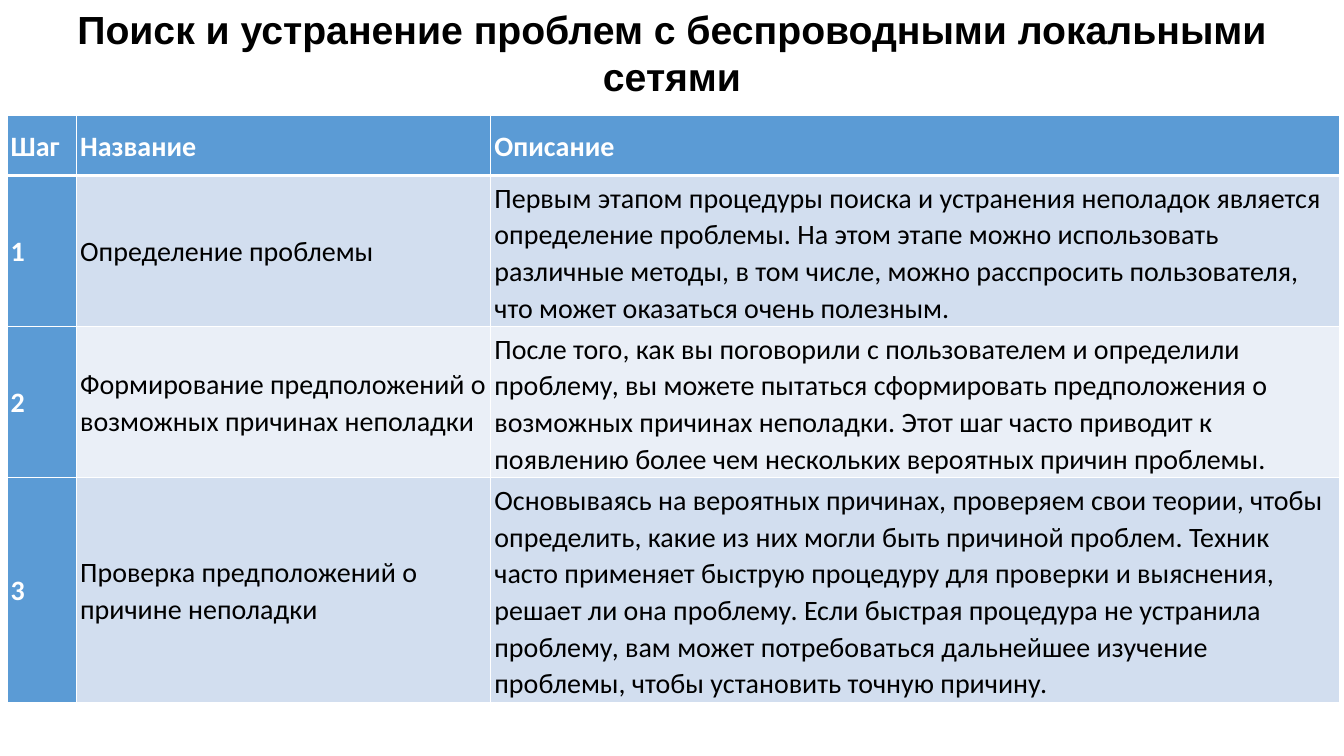
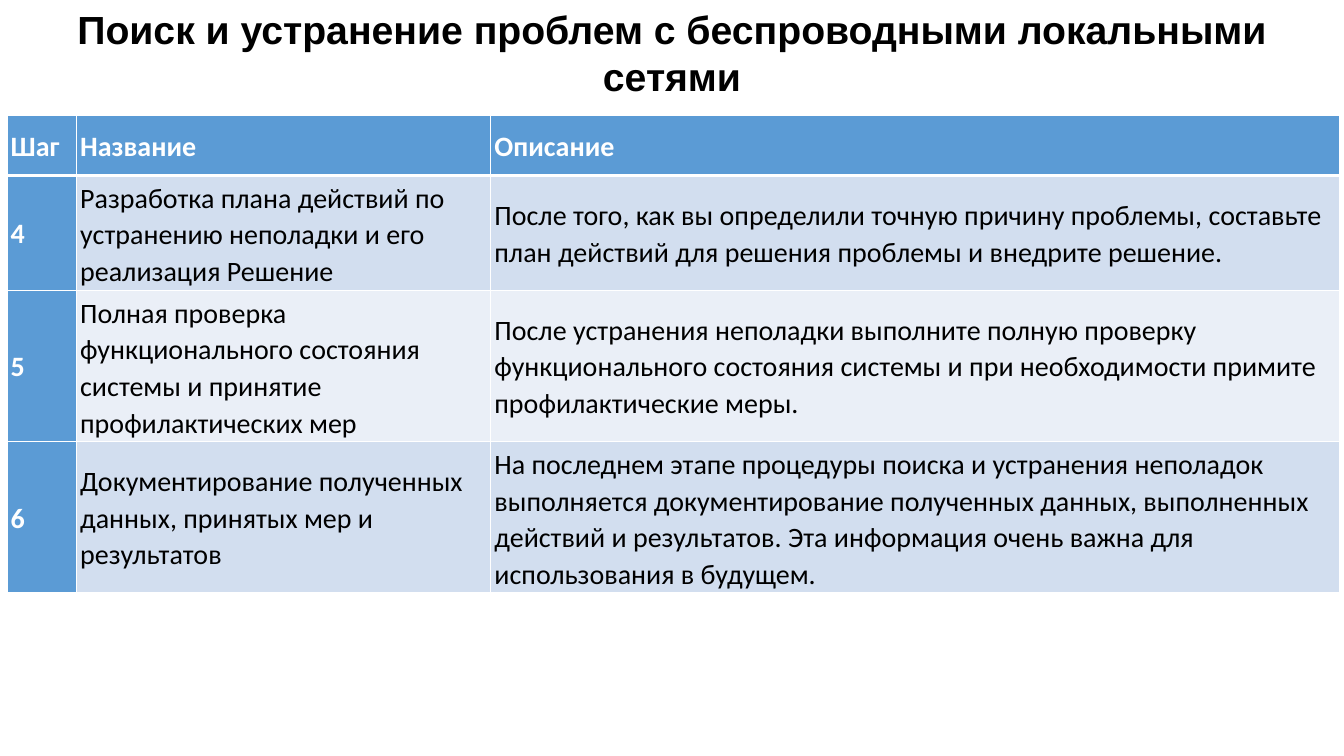
import pptx
import pptx.util
import pptx.dml.color
import pptx.enum.text
import pptx.oxml
import pptx.oxml.ns

Cm, Pt = pptx.util.Cm, pptx.util.Pt
MIDDLE = pptx.enum.text.MSO_ANCHOR.MIDDLE

TITLE = "Поиск и устранение проблем с беспроводными локальными сетями"
HEAD = ("Шаг", "Название", "Описание")

# Each step: row height in cm, name, description
SLIDES = [
    [
        (3.81, "Определение проблемы",
         "Первым этапом процедуры поиска и устранения неполадок является "
         "определение проблемы. На этом этапе можно использовать различные "
         "методы, в том числе, можно расспросить пользователя, что может "
         "оказаться очень полезным."),
        (3.81, "Формирование предположений о возможных причинах неполадки",
         "После того, как вы поговорили с пользователем и определили "
         "проблему, вы можете пытаться сформировать предположения о "
         "возможных причинах неполадки. Этот шаг часто приводит к появлению "
         "более чем нескольких вероятных причин проблемы."),
        (5.66, "Проверка предположений о причине неполадки",
         "Основываясь на вероятных причинах, проверяем свои теории, чтобы "
         "определить, какие из них могли быть причиной проблем. Техник часто "
         "применяет быструю процедуру для проверки и выяснения, решает ли "
         "она проблему. Если быстрая процедура не устранила проблему, вам "
         "может потребоваться дальнейшее изучение проблемы, чтобы установить "
         "точную причину."),
    ],
    [
        (2.9, "Разработка плана действий по устранению неполадки и его "
         "реализация Решение",
         "После того, как вы определили точную причину проблемы, составьте "
         "план действий для решения проблемы и внедрите решение."),
        (3.81, "Полная проверка функционального состояния системы и принятие "
         "профилактических мер",
         "После устранения неполадки выполните полную проверку "
         "функционального состояния системы и при необходимости примите "
         "профилактические меры."),
        (3.81, "Документирование полученных данных, принятых мер и результатов",
         "На последнем этапе процедуры поиска и устранения неполадок "
         "выполняется документирование полученных данных, выполненных "
         "действий и результатов. Эта информация очень важна для "
         "использования в будущем."),
    ],
]

WHITE, BLACK, BLUE = "FFFFFF", "000000", "5B9BD5"
BANDS = ("D2DEEF", "EAEFF7")
WIDTH, HEIGHT = 33.87, 19.05
COLS = (1.75, 10.44, 21.39)
LEFT, TOP, HEAD_H, INSET = 0.18, 2.9, 1.52, 0.09
THIN, THICK = 1, 3


def paint(fill, color):
    fill.solid()
    fill.fore_color.rgb = pptx.dml.color.RGBColor.from_string(color)


def write(para, text, face, size, color, bold):
    run = para.add_run()
    run.text = text
    font = run.font
    font.name, font.size, font.bold = face, Pt(size), bold
    paint(font.fill, color)


def border(cell, **widths):
    """Draw white cell borders; widths in points, in the order L, R, T, B."""
    props = cell._tc.get_or_add_tcPr()
    for spot, (side, width) in enumerate(widths.items()):
        props.insert(spot, pptx.oxml.parse_xml(
            f'<a:ln{side} {pptx.oxml.ns.nsdecls("a")} w="{Pt(width)}">'
            f'<a:solidFill><a:srgbClr val="{WHITE}"/></a:solidFill>'
            f'</a:ln{side}>'))


def add_title(slide):
    title = slide.shapes.title
    title.left, title.top = Cm(0), Cm(0)
    title.width, title.height = Cm(WIDTH), Cm(2.51)
    paint(title.fill, WHITE)
    frame = title.text_frame
    frame.word_wrap = True
    frame.auto_size = pptx.enum.text.MSO_AUTO_SIZE.SHAPE_TO_FIT_TEXT
    frame.vertical_anchor = MIDDLE
    frame.margin_left = frame.margin_right = Cm(0.25)
    frame.margin_top, frame.margin_bottom = Cm(0.13), Cm(0)
    para = frame.paragraphs[0]
    para.alignment = pptx.enum.text.PP_ALIGN.CENTER
    write(para, TITLE, "Arial", 28, BLACK, True)


def set_cell(cell, text, row, col):
    label = row == 0 or col == 0
    cell.vertical_anchor = MIDDLE
    cell.margin_left = cell.margin_right = Cm(INSET)
    cell.margin_top = cell.margin_bottom = Cm(INSET)
    paint(cell.fill, BLUE if label else BANDS[(row - 1) % 2])
    border(cell, L=THIN, R=THIN,
           T=THICK if row == 1 else THIN,
           B=THICK if row == 0 else THIN)
    para = cell.text_frame.paragraphs[0]
    para.line_spacing = 1.07
    write(para, text, "Calibri", 20, WHITE if label else BLACK, label)


def add_steps(slide, steps, first):
    rows = [HEAD] + [(str(num), name, note)
                     for num, (_, name, note) in enumerate(steps, first)]
    highs = [HEAD_H] + [step[0] for step in steps]
    table = slide.shapes.add_table(
        len(rows), len(COLS), Cm(LEFT), Cm(TOP),
        Cm(sum(COLS)), Cm(sum(highs))).table
    for col, width in zip(table.columns, COLS):
        col.width = Cm(width)
    for row, (high, texts) in enumerate(zip(highs, rows)):
        table.rows[row].height = Cm(high)
        for col, text in enumerate(texts):
            set_cell(table.cell(row, col), text, row, col)


def main():
    deck = pptx.Presentation()
    deck.slide_width, deck.slide_height = Cm(WIDTH), Cm(HEIGHT)
    first = 1
    for steps in SLIDES:
        slide = deck.slides.add_slide(deck.slide_layouts[5])
        add_title(slide)
        add_steps(slide, steps, first)
        first += len(steps)
    deck.save("out.pptx")


if __name__ == "__main__":
    main()
